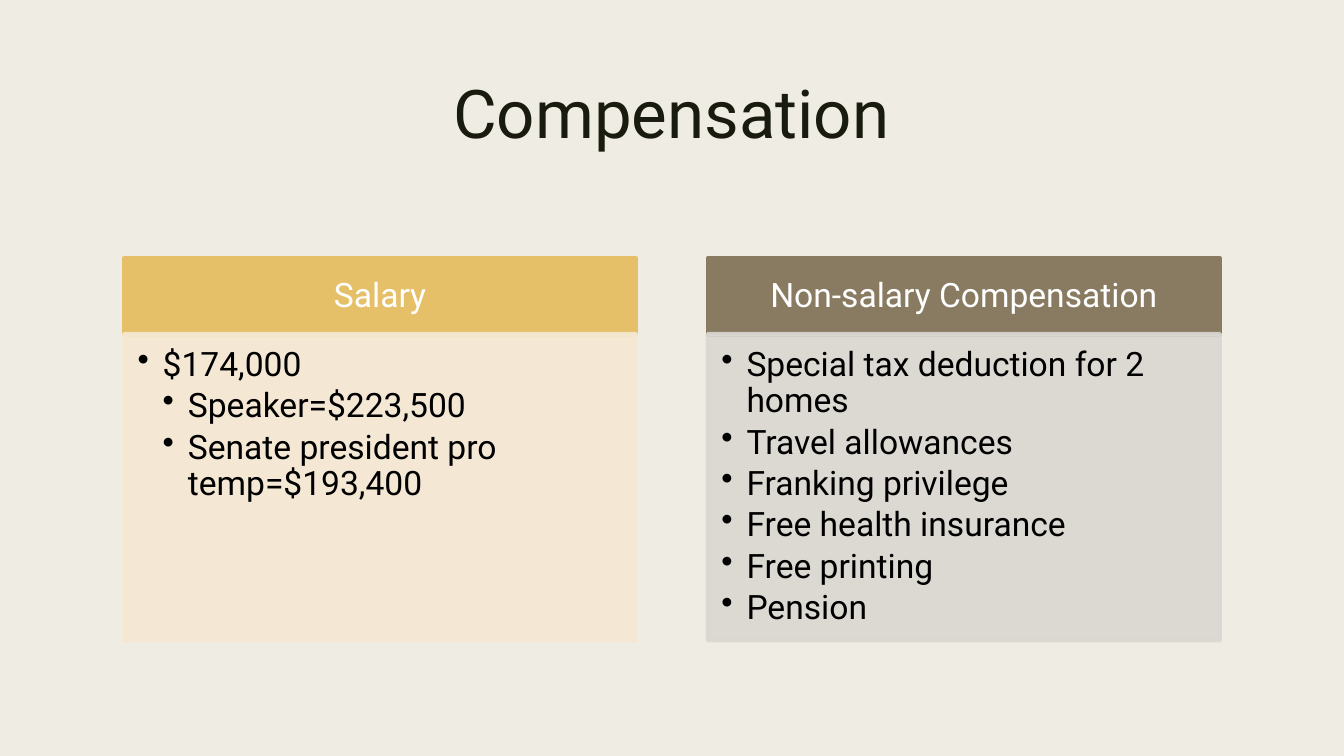
from lxml.etree import SubElement
from pptx import Presentation
from pptx.dml.color import RGBColor
from pptx.enum.shapes import MSO_SHAPE
from pptx.enum.text import MSO_ANCHOR, PP_ALIGN
from pptx.oxml.ns import qn
from pptx.util import Pt

PX = 9525
FONT = "Roboto"
INDENT = 24
HEADER_HEIGHT = 73
COLUMN_LEFT, COLUMN_TOP, COLUMN_WIDTH, COLUMN_HEIGHT = 118, 246, 488, 364
COLUMN_STEP = 556

COLUMNS = [
    ("Salary", "E6C069", "F5E8D4", [
        (1, "$174,000"),
        (2, "Speaker=$223,500"),
        (2, "Senate president pro temp=$193,400"),
    ]),
    ("Non-salary Compensation", "897B61", "DAD7D2", [
        (1, "Special tax deduction for 2 homes"),
        (1, "Travel allowances"),
        (1, "Franking privilege"),
        (1, "Free health insurance"),
        (1, "Free printing"),
        (1, "Pension"),
    ]),
]


def px(length):
    return length * PX


def paint(color_format, color):
    color_format.rgb = RGBColor.from_string(color)


def set_frame(frame, insets, anchor):
    frame.word_wrap = True
    frame.vertical_anchor = anchor
    (frame.margin_left, frame.margin_top,
     frame.margin_right, frame.margin_bottom) = map(px, insets)


def write(paragraph, text, size=24, color="000000", align=PP_ALIGN.LEFT,
          spacing=0.9, after=0, bullet_level=0):
    paragraph.alignment = align
    paragraph.line_spacing = spacing
    paragraph.space_before = Pt(0)
    paragraph.space_after = Pt(after)
    run = paragraph.add_run()
    run.text = text
    run.font.size = Pt(size)
    run.font.name = FONT
    paint(run.font.color, color)
    if bullet_level:
        paragraph.level = bullet_level
        properties = paragraph._p.get_or_add_pPr()
        properties.set("marL", str(px(INDENT * bullet_level)))
        properties.set("indent", str(px(-INDENT)))
        SubElement(properties, qn("a:buChar"), char="•")


def add_panel(slide, box, color, opacity=100):
    panel = slide.shapes.add_shape(MSO_SHAPE.RECTANGLE, *map(px, box))
    panel.shadow.inherit = False
    panel.fill.solid()
    paint(panel.fill.fore_color, color)
    panel.line.width = Pt(2.75)
    paint(panel.line.color, color)
    if opacity < 100:
        for shade in panel._element.spPr.iter(qn("a:srgbClr")):
            SubElement(shade, qn("a:alpha"), val=str(opacity * 1000))
    return panel.text_frame


def add_title(slide, box, text):
    title = slide.shapes.add_textbox(*map(px, box)).text_frame
    set_frame(title, (10, 5, 10, 5), MSO_ANCHOR.TOP)
    write(title.paragraphs[0], text, size=48, color="191B0E",
          align=PP_ALIGN.CENTER, spacing=0.89)


def add_column(slide, box, heading, header_color, body_color, items):
    left, top, width, height = box
    header = add_panel(slide, (left, top, width, HEADER_HEIGHT), header_color)
    set_frame(header, (18, 11, 18, 11), MSO_ANCHOR.MIDDLE)
    write(header.paragraphs[0], heading, color="FFFFFF", align=PP_ALIGN.CENTER)

    body_box = left, top + HEADER_HEIGHT - 1, width, height - HEADER_HEIGHT + 1
    body = add_panel(slide, body_box, body_color, opacity=90)
    set_frame(body, (13, 13, 18, 20), MSO_ANCHOR.TOP)
    for index, (level, item) in enumerate(items):
        paragraph = body.add_paragraph() if index else body.paragraphs[0]
        write(paragraph, item, after=3.6, bullet_level=level)


def main():
    deck = Presentation()
    deck.slide_width, deck.slide_height = px(1280), px(720)
    slide = deck.slides.add_slide(deck.slide_layouts[6])
    slide.background.fill.solid()
    paint(slide.background.fill.fore_color, "EFEDE3")

    add_title(slide, (67, 72, 1145, 156), "Compensation")
    for index, column in enumerate(COLUMNS):
        left = COLUMN_LEFT + index * COLUMN_STEP
        add_column(slide, (left, COLUMN_TOP, COLUMN_WIDTH, COLUMN_HEIGHT), *column)
    deck.save("out.pptx")


if __name__ == "__main__":
    main()
